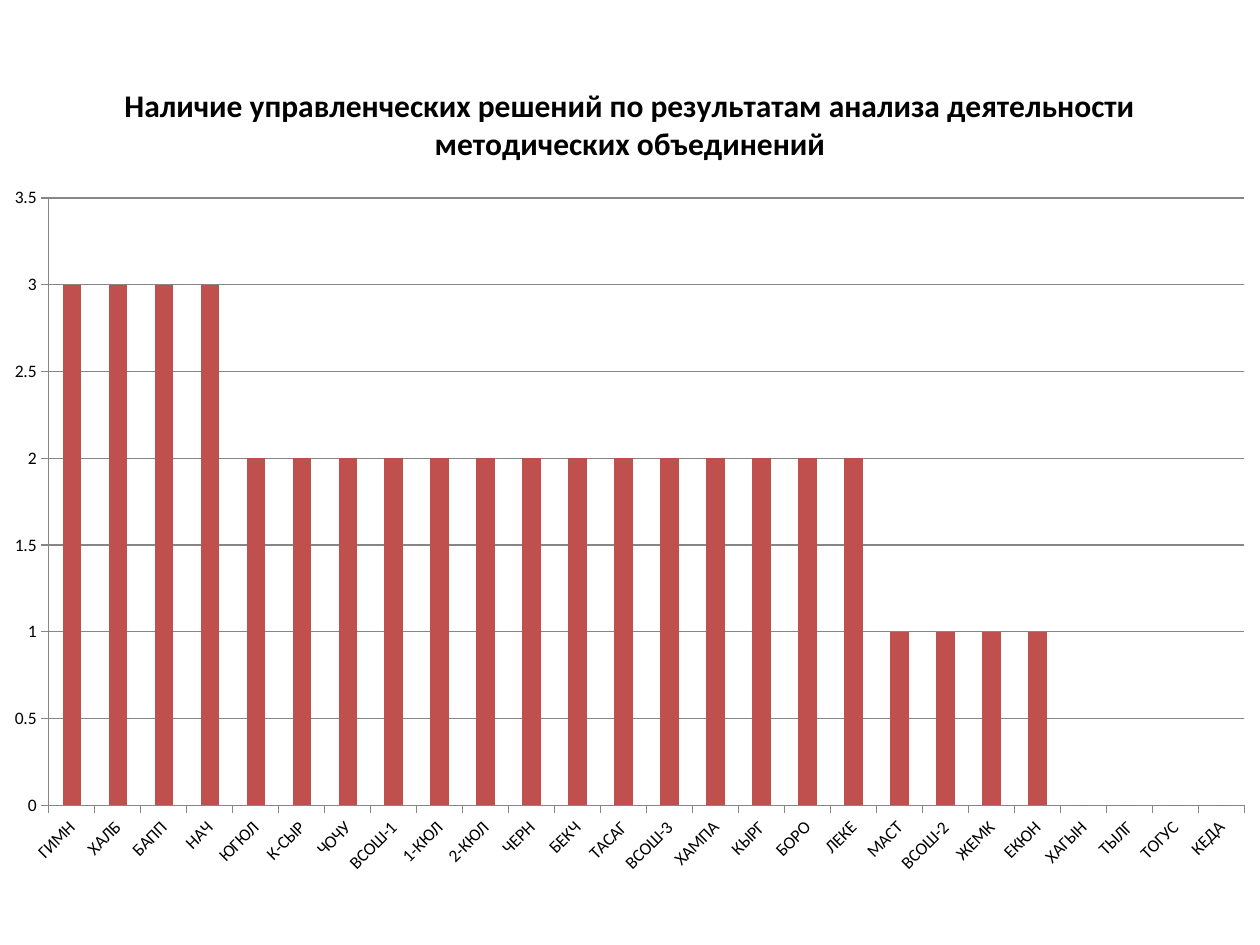
from pptx import Presentation
from pptx.chart.data import CategoryChartData
from pptx.dml.color import RGBColor
from pptx.enum.chart import XL_CHART_TYPE, XL_TICK_MARK
from pptx.oxml import parse_xml
from pptx.oxml.ns import nsdecls
from pptx.util import Inches, Pt

COLUMNS = XL_CHART_TYPE.COLUMN_CLUSTERED
TICK_OUTSIDE = XL_TICK_MARK.OUTSIDE

TITLE = ("Наличие управленческих решений по результатам анализа "
         "деятельности методических объединений")
SCHOOLS_BY_DECISIONS = {
    3: ["ГИМН", "ХАЛБ", "БАПП", "НАЧ"],
    2: ["ЮГЮЛ", "К-СЫР", "ЧОЧУ", "ВСОШ-1", "1-КЮЛ", "2-КЮЛ", "ЧЕРН",
        "БЕКЧ", "ТАСАГ", "ВСОШ-3", "ХАМПА", "КЫРГ", "БОРО", "ЛЕКЕ"],
    1: ["МАСТ", "ВСОШ-2", "ЖЕМК", "ЕКЮН"],
    0: ["ХАГЫН", "ТЫЛГ", "ТОГУС", "КЕДА"],
}

THEME = {
    "font": "Calibri",
    "text": RGBColor(0x00, 0x00, 0x00),
    "bar": RGBColor(0xC0, 0x50, 0x4D),
    "line": RGBColor(0x86, 0x86, 0x86),
    "title_size": Pt(18),
    "label_size": Pt(10),
    "line_width": Pt(0.75),
}
CHART_FRAME = (-0.08, 0.43, 10.16, 6.64)
PLOT_SHARES = {"x": 0.046, "y": 0.172, "w": 0.934, "h": 0.726}


def style_font(font, size, bold=False):
    font.name = THEME["font"]
    font.size = size
    font.bold = bold
    font.color.rgb = THEME["text"]


def style_line(line):
    line.color.rgb = THEME["line"]
    line.width = THEME["line_width"]


def place_plot(chart):
    """Fix the inner plot area at shares of the chart frame."""
    shares = "".join(f'<c:{key} val="{share}"/>' for key, share in PLOT_SHARES.items())
    plot_area = chart._chartSpace.chart.plotArea
    for layout in plot_area.findall("{*}layout"):
        plot_area.remove(layout)
    plot_area.insert(0, parse_xml(
        f'<c:layout {nsdecls("c")}><c:manualLayout><c:layoutTarget val="inner"/>'
        f'<c:xMode val="edge"/><c:yMode val="edge"/>{shares}'
        '</c:manualLayout></c:layout>'))


def add_decisions_chart(slide):
    data = CategoryChartData()
    data.categories = [school for schools in SCHOOLS_BY_DECISIONS.values()
                       for school in schools]
    data.add_series("Series 1", [count for count, schools in SCHOOLS_BY_DECISIONS.items()
                                 for _ in schools])
    frame = [Inches(length) for length in CHART_FRAME]
    chart = slide.shapes.add_chart(COLUMNS, *frame, data).chart
    style_font(chart.font, THEME["label_size"])
    chart.has_legend = False

    chart.has_title = True
    chart.chart_title.include_in_layout = False
    title_frame = chart.chart_title.text_frame
    title_frame.text = TITLE
    style_font(title_frame.paragraphs[0].font, THEME["title_size"], bold=True)

    plot = chart.plots[0]
    plot.gap_width = 150
    plot.vary_by_categories = False
    fill = plot.series[0].format.fill
    fill.solid()
    fill.fore_color.rgb = THEME["bar"]

    for axis in (chart.category_axis, chart.value_axis):
        axis.major_tick_mark = TICK_OUTSIDE
        style_line(axis.format.line)
        style_font(axis.tick_labels.font, THEME["label_size"])
    chart.category_axis._element.txPr.bodyPr.set("rot", "-2700000")

    value_axis = chart.value_axis
    value_axis.minimum_scale, value_axis.maximum_scale = 0, 3.5
    value_axis.major_unit = 0.5
    value_axis.has_major_gridlines = True
    style_line(value_axis.major_gridlines.format.line)
    value_axis.tick_labels.number_format = "General"
    value_axis.tick_labels.number_format_is_linked = False
    place_plot(chart)


def main():
    presentation = Presentation()
    presentation.slide_width = Inches(10)
    presentation.slide_height = Inches(7.5)
    slide = presentation.slides.add_slide(presentation.slide_layouts[6])
    add_decisions_chart(slide)
    presentation.save("out.pptx")


if __name__ == "__main__":
    main()
